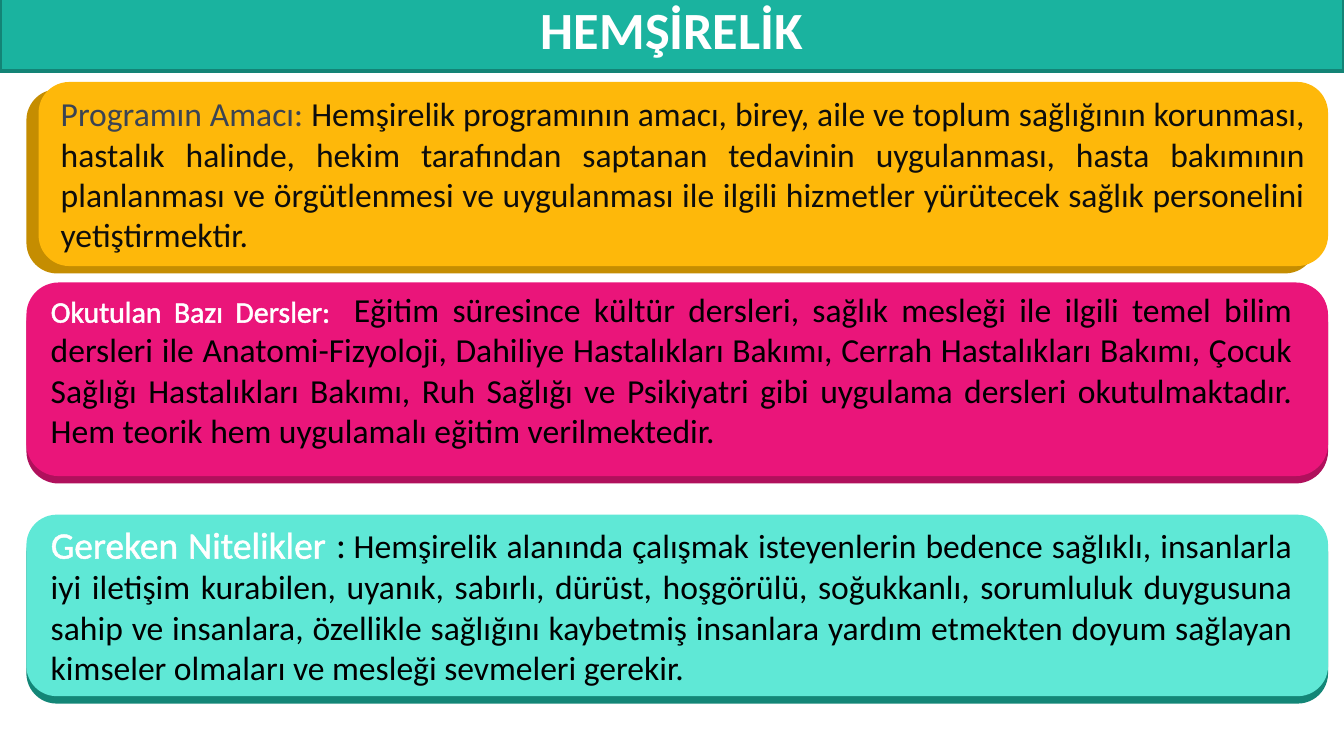
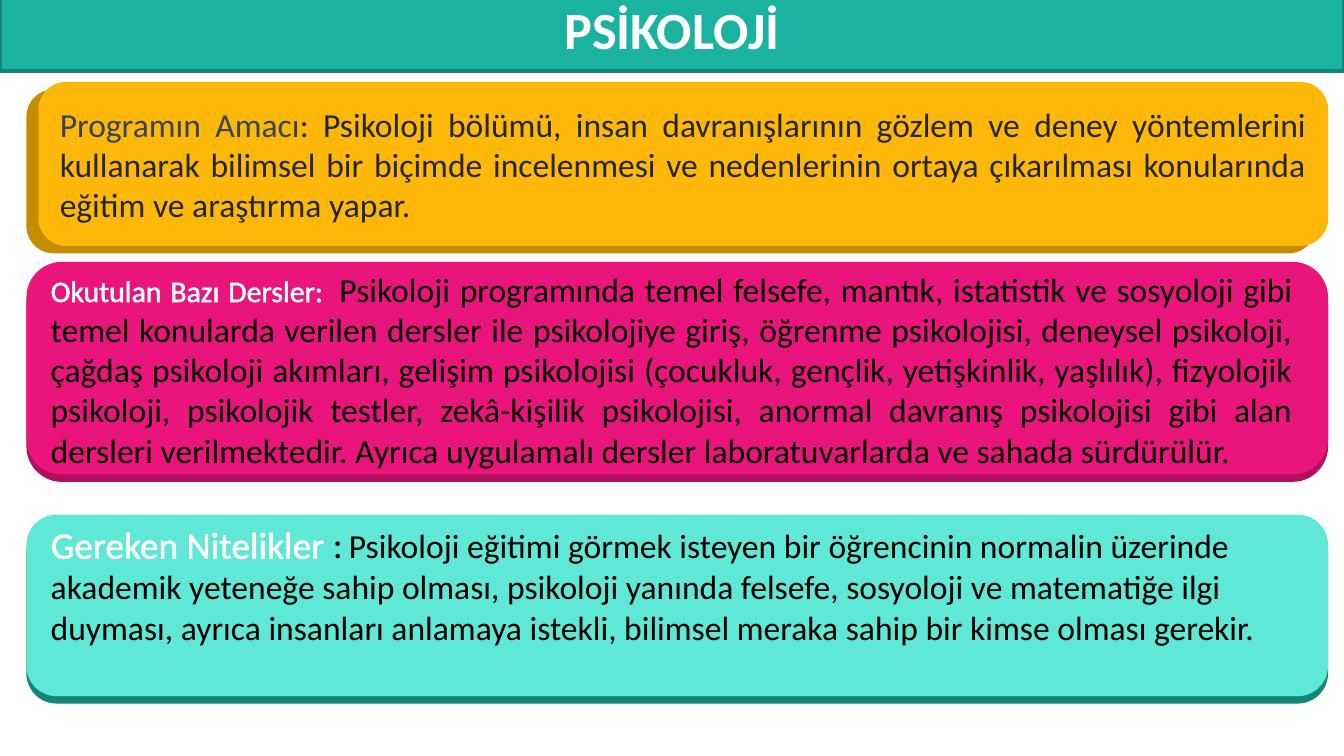
from dataclasses import dataclass

from lxml.etree import SubElement
from pptx import Presentation
from pptx.dml.color import RGBColor
from pptx.enum.shapes import MSO_SHAPE
from pptx.enum.text import MSO_ANCHOR, MSO_AUTO_SIZE, PP_ALIGN
from pptx.oxml.ns import qn
from pptx.util import Cm, Pt


@dataclass(frozen=True)
class Theme:
    font: str = "Calibri"
    band: str = "1AB39F"
    rim: str = "138476"
    gold: tuple = ("FEB80A", "C58D01")
    pink: tuple = ("EA157A", "B0105C")
    teal: tuple = ("5FE8D6", "138677")
    white: str = "FFFFFF"
    black: str = "000000"
    slate: str = "3B4453"
    ink: str = "0D0D0D"
    coal: str = "262626"
    title: int = 28
    lead: int = 20
    body: int = 18
    label: int = 16
    gap: int = 14
    edge: float = 1.45


T = Theme()


def block(shapes, kind, box, fill):
    shape = shapes.add_shape(kind, *(Cm(v) for v in box))
    shape.shadow.inherit = False
    shape.fill.solid()
    shape.fill.fore_color.rgb = RGBColor.from_string(fill)
    shape.line.fill.background()
    return shape


def write(frame, runs, align):
    """Fill the first paragraph with (text, size, colour, edged) runs."""
    frame.word_wrap = True
    para = frame.paragraphs[0]
    para.alignment = align
    for text, size, color, edged in runs:
        run = para.add_run()
        run.text = text
        run.font.name = T.font
        run.font.size = Pt(size)
        run.font.color.rgb = RGBColor.from_string(color)
        if edged:
            line = SubElement(run._r.rPr, qn("a:ln"), w=str(Pt(T.edge)))
            fill = SubElement(line, qn("a:solidFill"))
            SubElement(fill, qn("a:srgbClr"), val=T.white)
            run._r.rPr.insert(0, line)


JUST, LEFT = PP_ALIGN.JUSTIFY, PP_ALIGN.LEFT
ROUND = MSO_SHAPE.ROUNDED_RECTANGLE
SIDE, WIDE, DROP = 0.5, 24.6, 0.14
SHIFT = 0.23  # sideways step of the gold card over its shade

# Each card: colours, top, height, height of its text box (0: text in card),
# alignment, runs
pages = [
    ("HEMŞİRELİK", [
        (T.gold, 1.55, 3.48, 0, JUST, [
            ("Programın Amacı: ", T.body, T.slate, True),
            ("Hemşirelik programının amacı, birey, aile ve toplum sağlığının "
             "korunması, hastalık halinde, hekim tarafından saptanan tedavinin "
             "uygulanması, hasta bakımının planlanması ve örgütlenmesi ve "
             "uygulanması ile ilgili hizmetler yürütecek sağlık personelini "
             "yetiştirmektir.", T.body, T.ink, False)]),
        (T.pink, 5.34, 3.66, 3.33, JUST, [
            ("Okutulan Bazı Dersler:", T.label, T.white, True),
            ("  ", T.gap, T.white, True),
            ("Eğitim süresince kültür dersleri, sağlık mesleği ile ilgili temel "
             "bilim dersleri ile Anatomi-Fizyoloji, Dahiliye Hastalıkları "
             "Bakımı, Cerrah Hastalıkları Bakımı, Çocuk Sağlığı Hastalıkları "
             "Bakımı, Ruh Sağlığı ve Psikiyatri gibi uygulama dersleri "
             "okutulmaktadır. Hem teorik hem uygulamalı eğitim verilmektedir.",
             T.body, T.black, False)]),
        (T.teal, 9.73, 3.43, 3.81, JUST, [
            ("Gereken Nitelikler", T.lead, T.white, True),
            (" :", T.lead, T.black, False),
            (" ", T.gap, T.black, False),
            ("Hemşirelik alanında çalışmak isteyenlerin bedence sağlıklı, "
             "insanlarla iyi iletişim kurabilen, uyanık, sabırlı, dürüst, "
             "hoşgörülü, soğukkanlı, sorumluluk duygusuna sahip ve insanlara, "
             "özellikle sağlığını kaybetmiş insanlara yardım etmekten doyum "
             "sağlayan kimseler olmaları ve mesleği sevmeleri gerekir.",
             T.body, T.black, False)]),
    ]),
    ("PSİKOLOJİ", [
        (T.gold, 1.55, 3.1, 0, JUST, [
            ("Programın Amacı", T.body, T.slate, True),
            (":", T.body, T.coal, True),
            (" Psikoloji bölümü, insan davranışlarının gözlem ve deney "
             "yöntemlerini kullanarak bilimsel bir biçimde incelenmesi ve "
             "nedenlerinin ortaya çıkarılması konularında eğitim ve araştırma "
             "yapar.", T.body, T.coal, False)]),
        (T.pink, 4.95, 4.02, 4.5, JUST, [
            ("Okutulan Bazı Dersler:", T.label, T.white, True),
            ("  ", T.gap, T.white, True),
            ("Psikoloji programında temel felsefe, mantık, istatistik ve "
             "sosyoloji gibi temel konularda verilen dersler ile psikolojiye "
             "giriş, öğrenme psikolojisi, deneysel psikoloji, çağdaş psikoloji "
             "akımları, gelişim psikolojisi (çocukluk, gençlik, yetişkinlik, "
             "yaşlılık), fizyolojik psikoloji, psikolojik testler, zekâ-kişilik "
             "psikolojisi, anormal davranış psikolojisi gibi alan dersleri "
             "verilmektedir. Ayrıca uygulamalı dersler laboratuvarlarda ve "
             "sahada sürdürülür.", T.body, T.black, False)]),
        (T.teal, 9.73, 3.43, 4.19, LEFT, [
            ("Gereken Nitelikler", T.lead, T.white, True),
            (" :", T.lead, T.black, False),
            (" ", T.gap, T.black, False),
            ("Psikoloji eğitimi görmek isteyen bir öğrencinin normalin üzerinde "
             "akademik yeteneğe sahip olması, psikoloji yanında felsefe, "
             "sosyoloji ve matematiğe ilgi duyması, ayrıca insanları anlamaya "
             "istekli, bilimsel meraka sahip bir kimse olması gerekir.",
             T.body, T.black, False)]),
    ]),
]

deck = Presentation()
deck.slide_width, deck.slide_height = Cm(25.4), Cm(14.29)

for title, cards in pages:
    slide = deck.slides.add_slide(deck.slide_layouts[6])

    band = block(slide.shapes, MSO_SHAPE.RECTANGLE, (0, -0.25, 25.4, 1.6), T.band)
    band.line.color.rgb = RGBColor.from_string(T.rim)
    band.line.width = Pt(2)
    frame = band.text_frame
    frame.vertical_anchor = MSO_ANCHOR.MIDDLE
    frame.margin_left = frame.margin_right = Cm(0.2)
    frame.margin_top = frame.margin_bottom = Cm(0.1)
    write(frame, [(title, T.title, T.white, False)], PP_ALIGN.CENTER)
    frame.paragraphs[0].runs[0].font.bold = True

    for (face, shade), top, height, depth, align, runs in cards:
        group = slide.shapes.add_group_shape()
        step = 0 if depth else SHIFT
        wide = WIDE - step
        block(group.shapes, ROUND, (SIDE, top + DROP, wide, height), shade)
        card = block(group.shapes, ROUND, (SIDE + step, top, wide, height), face)
        if depth:
            note = group.shapes.add_textbox(Cm(0.71), Cm(top), Cm(23.98), Cm(depth))
            note.text_frame.auto_size = MSO_AUTO_SIZE.SHAPE_TO_FIT_TEXT
            write(note.text_frame, runs, align)
        else:
            card.text_frame.vertical_anchor = MSO_ANCHOR.MIDDLE
            write(card.text_frame, runs, align)

deck.save("out.pptx")
